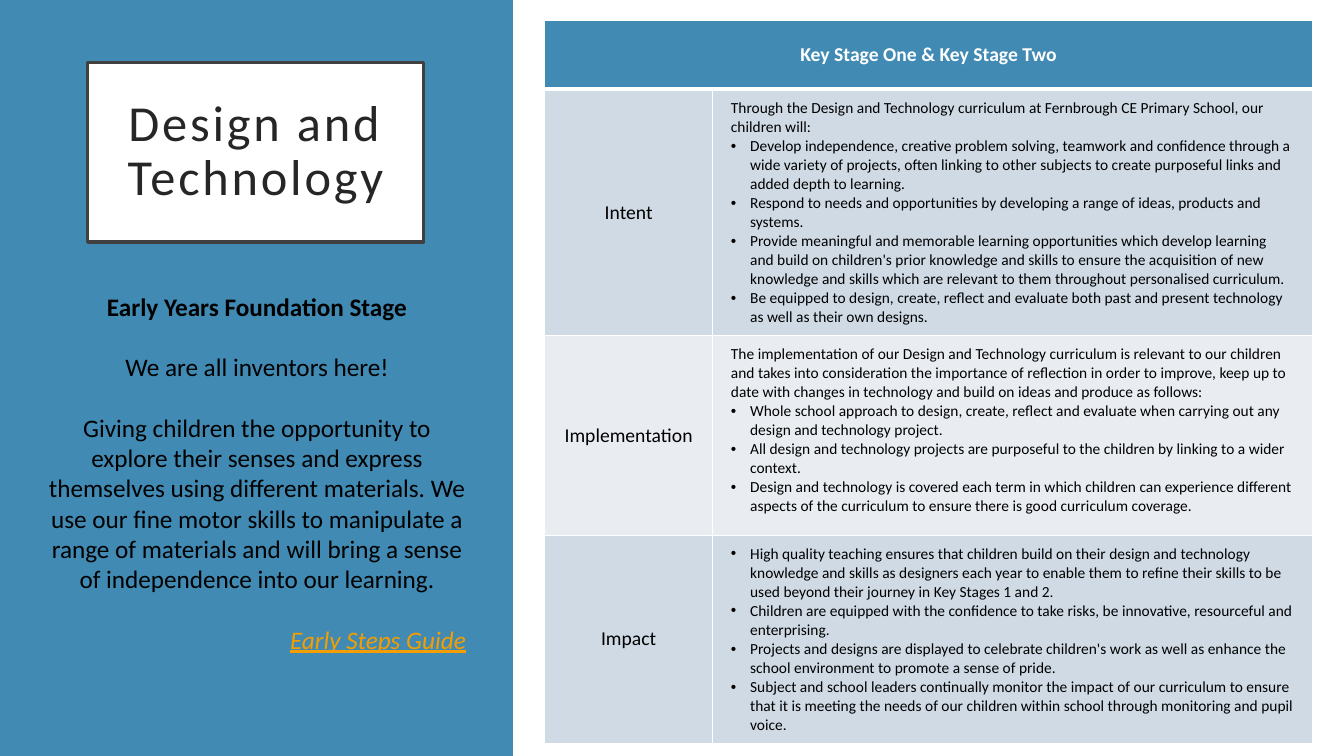
from dataclasses import dataclass

from lxml.etree import SubElement, fromstring
from pptx import Presentation
from pptx.dml.color import RGBColor
from pptx.enum.shapes import MSO_SHAPE
from pptx.enum.text import MSO_ANCHOR, MSO_AUTO_SIZE, PP_ALIGN
from pptx.oxml.ns import nsdecls, qn
from pptx.util import Inches, Pt


@dataclass(frozen=True)
class Theme:
    font: str = "Calibri"
    blue: str = "418AB3"
    white: str = "FFFFFF"
    black: str = "000000"
    frame: str = "404040"
    title_ink: str = "262626"
    link: str = "F59E00"
    bands: tuple = ("CFDAE5", "E9EDF2")
    title_size: float = 36
    body_size: float = 18
    label_size: float = 14
    detail_size: float = 11
    thin_border: float = 1
    header_border: float = 3


THEME = Theme()

EARLY_YEARS = [
    ("Early Years Foundation Stage", {"bold": True}),
    ("We are all inventors here!", {}),
    ("Giving children the opportunity to explore their senses and express themselves using "
     "different materials. We use our fine motor skills to manipulate a range of materials "
     "and will bring a sense of independence into our learning.", {}),
    ("Early Steps Guide", {"color": THEME.link, "italic": True, "underline": True,
                           "align": PP_ALIGN.RIGHT}),
]

TABLE_HEADING = "Key Stage One & Key Stage Two"

# Each section: label, introduction (may be empty), bullet points
SECTIONS = [
    ("Intent",
     "Through the Design and Technology curriculum at Fernbrough CE Primary School, our "
     "children will:",
     ["Develop independence, creative problem solving, teamwork and confidence through a wide "
      "variety of projects, often linking to other subjects to create purposeful links and "
      "added depth to learning.",
      "Respond to needs and opportunities by developing a range of ideas, products and systems.",
      "Provide meaningful and memorable learning opportunities which develop learning and build "
      "on children's prior knowledge and skills to ensure the acquisition of new knowledge and "
      "skills which are relevant to them throughout personalised curriculum.",
      "Be equipped to design, create, reflect and evaluate both past and present technology as "
      "well as their own designs."]),
    ("Implementation",
     "The implementation of our Design and Technology curriculum is relevant to our children "
     "and takes into consideration the importance of reflection in order to improve, keep up "
     "to date with changes in technology and build on ideas and produce as follows:",
     ["Whole school approach to design, create, reflect and evaluate when carrying out any "
      "design and technology project.",
      "All design and technology projects are purposeful to the children by linking to a wider "
      "context.",
      "Design and technology is covered each term in which children can experience different "
      "aspects of the curriculum to ensure there is good curriculum coverage."]),
    ("Impact", "",
     ["High quality teaching ensures that children build on their design and technology "
      "knowledge and skills as designers each year to enable them to refine their skills to be "
      "used beyond their journey in Key Stages 1 and 2.",
      "Children are equipped with the confidence to take risks, be innovative, resourceful and "
      "enterprising.",
      "Projects and designs are displayed to celebrate children's work as well as enhance the "
      "school environment to promote a sense of pride.",
      "Subject and school leaders continually monitor the impact of our curriculum to ensure "
      "that it is meeting the needs of our children within school through monitoring and pupil "
      "voice."]),
]


def write(frame, text, *, size, color=THEME.black, bold=False, italic=False, underline=False,
          align=PP_ALIGN.LEFT, before=0, line=None, tracking=0, bullet=False):
    """Add one formatted paragraph, using the frame's first paragraph while it is empty."""
    first = frame.paragraphs[0]
    paragraph = frame.add_paragraph() if first.runs else first
    paragraph.alignment = align
    paragraph.space_before = Pt(before)
    if line:
        paragraph.line_spacing = line
    run = paragraph.add_run()
    run.text = text
    font = run.font
    font.name, font.size = THEME.font, Pt(size)
    font.bold, font.italic, font.underline = bold, italic, underline
    font.color.rgb = RGBColor.from_string(color)
    if tracking:
        run._r.get_or_add_rPr().set("spc", str(tracking * 100))
    if bullet:
        properties = paragraph._p.get_or_add_pPr()
        indent = Inches(0.19)
        properties.set("marL", str(indent))
        properties.set("indent", str(-indent))
        SubElement(properties, qn("a:buFont")).set("typeface", "Arial")
        SubElement(properties, qn("a:buChar")).set("char", "•")


def set_borders(cell, **widths):
    """Draw white cell borders; widths are points by side, in the order L, R, T, B."""
    properties = cell._tc.get_or_add_tcPr()
    for index, (side, width) in enumerate(widths.items()):
        properties.insert(index, fromstring(
            f'<a:ln{side} {nsdecls("a")} w="{Pt(width)}"><a:solidFill>'
            f'<a:srgbClr val="{THEME.white}"/></a:solidFill></a:ln{side}>'))


class SlideBuilder:
    """Places elements by percentages of the slide's width and height."""

    def __init__(self, presentation, theme):
        self.theme = theme
        self.width, self.height = presentation.slide_width, presentation.slide_height
        self.slide = presentation.slides.add_slide(presentation.slide_layouts[6])
        self.fill(self.slide.background, theme.blue)

    def across(self, share):
        return round(self.width * share / 100)

    def down(self, share):
        return round(self.height * share / 100)

    def box(self, left, top, width, height):
        return self.across(left), self.down(top), self.across(width), self.down(height)

    def fill(self, target, color):
        target.fill.solid()
        target.fill.fore_color.rgb = RGBColor.from_string(color)

    def rectangle(self, *place, line=None):
        shape = self.slide.shapes.add_shape(MSO_SHAPE.RECTANGLE, *self.box(*place))
        shape.shadow.inherit = False
        self.fill(shape, self.theme.white)
        if line:
            shape.line.color.rgb = RGBColor.from_string(line)
            shape.line.width = Pt(2.5)
        else:
            shape.line.fill.background()
        return shape

    def title(self, text, *place):
        frame = self.rectangle(*place, line=self.theme.frame).text_frame
        frame.word_wrap = True
        frame.vertical_anchor = MSO_ANCHOR.MIDDLE
        frame.margin_left = frame.margin_right = Inches(0.3)
        frame.margin_top = frame.margin_bottom = Inches(0.2)
        write(frame, text, size=self.theme.title_size, color=self.theme.title_ink,
              align=PP_ALIGN.CENTER, line=0.9, tracking=2)

    def text(self, paragraphs, *place, gap):
        frame = self.slide.shapes.add_textbox(*self.box(*place)).text_frame
        frame.word_wrap = True
        frame.auto_size = MSO_AUTO_SIZE.SHAPE_TO_FIT_TEXT
        for index, (text, style) in enumerate(paragraphs):
            write(frame, text, **{"size": self.theme.body_size, "align": PP_ALIGN.CENTER,
                                  "before": gap if index else 0, **style})

    def cell(self, table, row, column, color, anchor=MSO_ANCHOR.MIDDLE):
        cell = table.cell(row, column)
        cell.margin_left = cell.margin_right = Inches(0.18)
        cell.margin_top = cell.margin_bottom = Inches(0.09)
        cell.vertical_anchor = anchor
        self.fill(cell, color)
        thin, heavy = self.theme.thin_border, self.theme.header_border
        set_borders(cell, L=thin, R=thin, T=heavy if row == 1 else thin,
                    B=heavy if row == 0 else thin)
        return cell.text_frame

    def table(self, heading, sections, left, top, columns, rows):
        place = self.box(left, top, sum(columns), sum(rows))
        table = self.slide.shapes.add_table(len(rows), len(columns), *place).table
        table.first_row = table.horz_banding = False
        for column, share in zip(table.columns, columns):
            column.width = self.across(share)
        for row, share in zip(table.rows, rows):
            row.height = self.down(share)

        # Heading across both columns
        theme = self.theme
        frames = [self.cell(table, 0, column, theme.blue) for column in range(len(columns))]
        table.cell(0, 0).merge(table.cell(0, len(columns) - 1))
        write(frames[0], heading, size=theme.label_size, color=theme.white, bold=True,
              align=PP_ALIGN.CENTER)

        # One banded row per section
        for row, (label, introduction, points) in enumerate(sections, start=1):
            band = theme.bands[(row - 1) % len(theme.bands)]
            write(self.cell(table, row, 0, band), label, size=theme.label_size,
                  align=PP_ALIGN.CENTER)
            details = self.cell(table, row, 1, band, MSO_ANCHOR.TOP)
            if introduction:
                write(details, introduction, size=theme.detail_size)
            for point in points:
                write(details, point, size=theme.detail_size, bullet=True)


def main():
    presentation = Presentation()
    presentation.slide_width, presentation.slide_height = Inches(13.33), Inches(7.5)
    builder = SlideBuilder(presentation, THEME)
    builder.title("Design and Technology", 6.53, 8.27, 24.98, 23.73)
    builder.rectangle(38.18, 0, 61.82, 100)
    builder.table(TABLE_HEADING, SECTIONS, 40.51, 2.75,
                  columns=(12.53, 44.64), rows=(9.07, 32.13, 26.4, 27.2))
    builder.text(EARLY_YEARS, 2.85, 37.87, 32.56, 49.87, gap=21.6)
    presentation.save("out.pptx")


if __name__ == "__main__":
    main()
